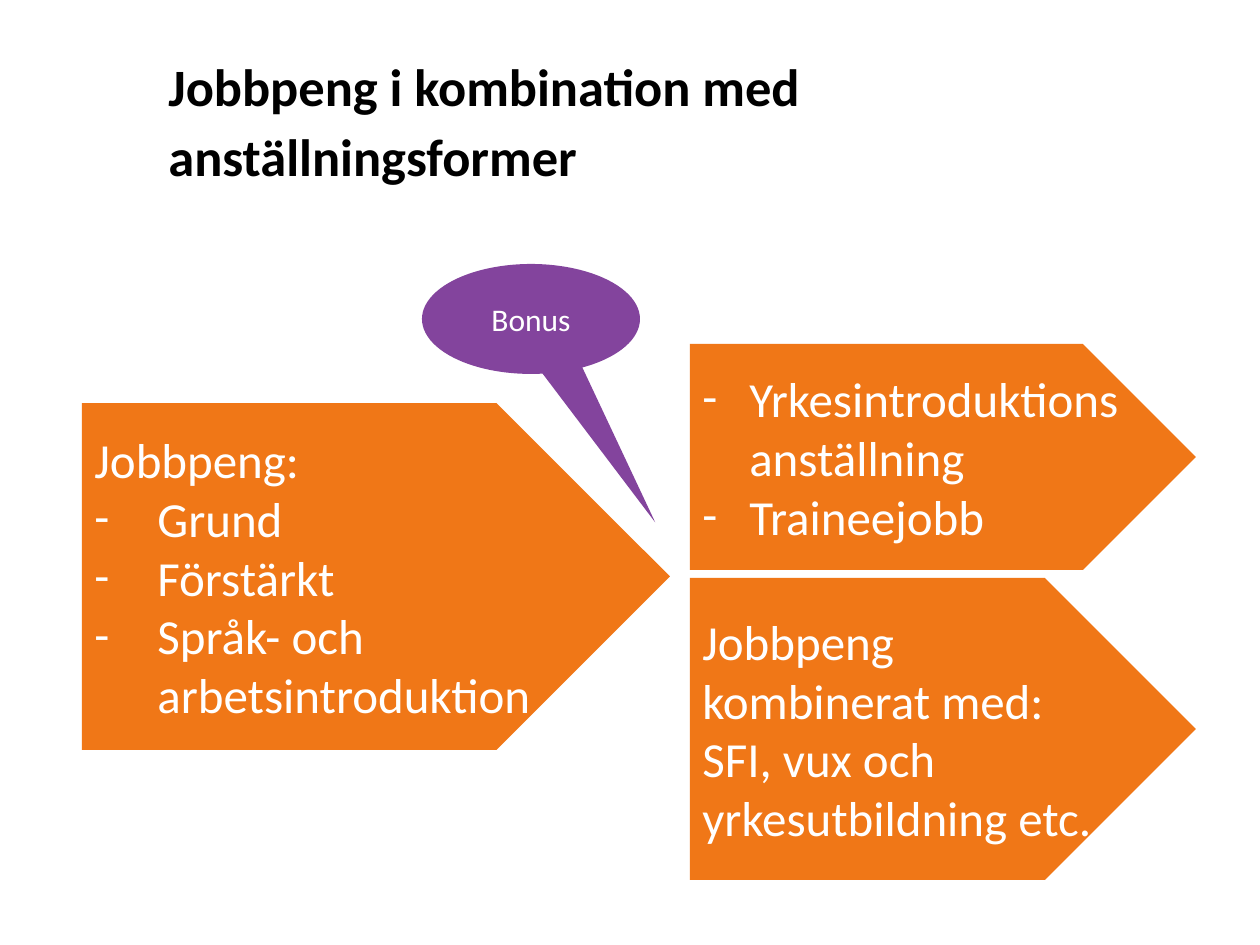
from pptx import Presentation
from pptx.dml.color import RGBColor
from pptx.enum.shapes import MSO_SHAPE
from pptx.enum.text import MSO_ANCHOR, PP_ALIGN
from pptx.oxml.ns import qn
from pptx.util import Pt
from lxml.etree import SubElement

PX = 914400 // 126
ORANGE = RGBColor(0xF0, 0x77, 0x17)
PURPLE = RGBColor(0x83, 0x44, 0x9D)
WHITE = RGBColor(0xFF, 0xFF, 0xFF)
BLACK = RGBColor(0, 0, 0)


def write(shape, lines, size, color, align=PP_ALIGN.LEFT, indent=0):
    frame = shape.text_frame
    frame.word_wrap = True
    frame.vertical_anchor = MSO_ANCHOR.MIDDLE
    for i, line in enumerate(lines):
        para = frame.add_paragraph() if i else frame.paragraphs[0]
        para.alignment = align
        para.add_run().text = line.removeprefix("- ")
        if line.startswith("- "):
            props = para._p.get_or_add_pPr()
            props.set("marL", str(indent * PX))
            props.set("indent", str(-indent * PX))
            SubElement(props, qn("a:buFont"), typeface="Calibri")
            SubElement(props, qn("a:buChar"), char="-")
        para.font.name = "Calibri"
        para.font.size = Pt(size)
        para.font.color.rgb = color


def draw(kind, box, fill):
    shape = slide.shapes.add_shape(kind, *[n * PX for n in box])
    shape.shadow.inherit = False
    shape.fill.solid()
    shape.fill.fore_color.rgb = fill
    shape.line.fill.background()
    return shape


deck = Presentation()
deck.slide_width = 1260 * PX
deck.slide_height = 945 * PX
slide = deck.slides.add_slide(deck.slide_layouts[6])

title = slide.shapes.add_textbox(156 * PX, 38 * PX, 1070 * PX, 158 * PX)
write(title, ["Jobbpeng i kombination med anställningsformer"], 30, BLACK)
head = title.text_frame.paragraphs[0]
head.line_spacing = Pt(40)
head.font.bold = True

arrows = [
    ((82, 403, 588, 347), 63,
     ["Jobbpeng:", "- Grund", "- Förstärkt", "- Språk- och arbetsintroduktion"]),
    ((690, 344, 506, 226), 47,
     ["- Yrkesintroduktionsanställning", "- Traineejobb"]),
    ((690, 578, 506, 302), 0,
     ["Jobbpeng kombinerat med:", "SFI, vux och yrkesutbildning etc."]),
]
for box, indent, lines in arrows:
    write(draw(MSO_SHAPE.PENTAGON, box, ORANGE), lines, 28, WHITE, indent=indent)

bonus = draw(MSO_SHAPE.OVAL_CALLOUT, (422, 264, 218, 110), PURPLE)
bonus.adjustments[0] = 0.57
bonus.adjustments[1] = 1.85
write(bonus, ["Bonus"], 18, WHITE, PP_ALIGN.CENTER)

deck.save("out.pptx")
